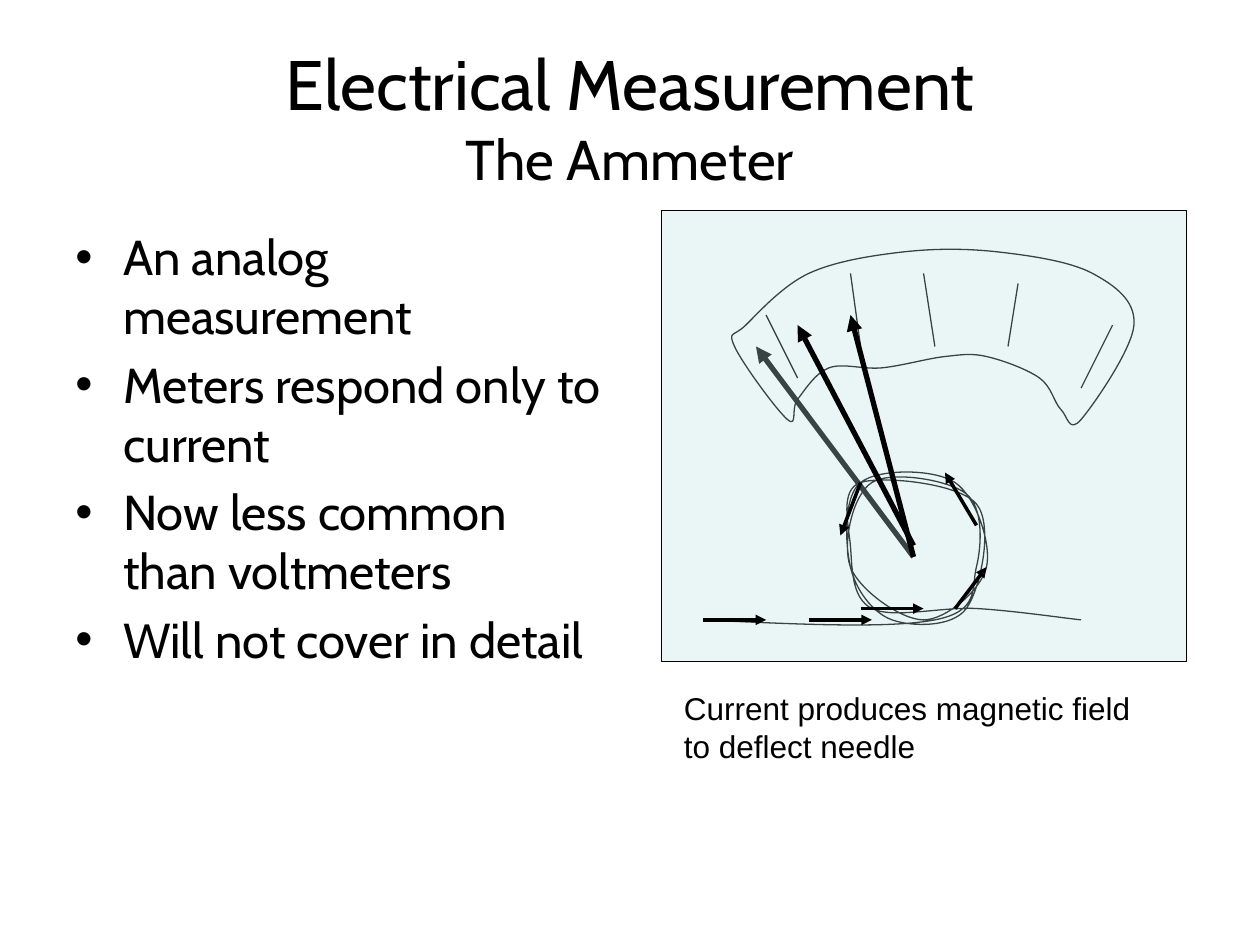
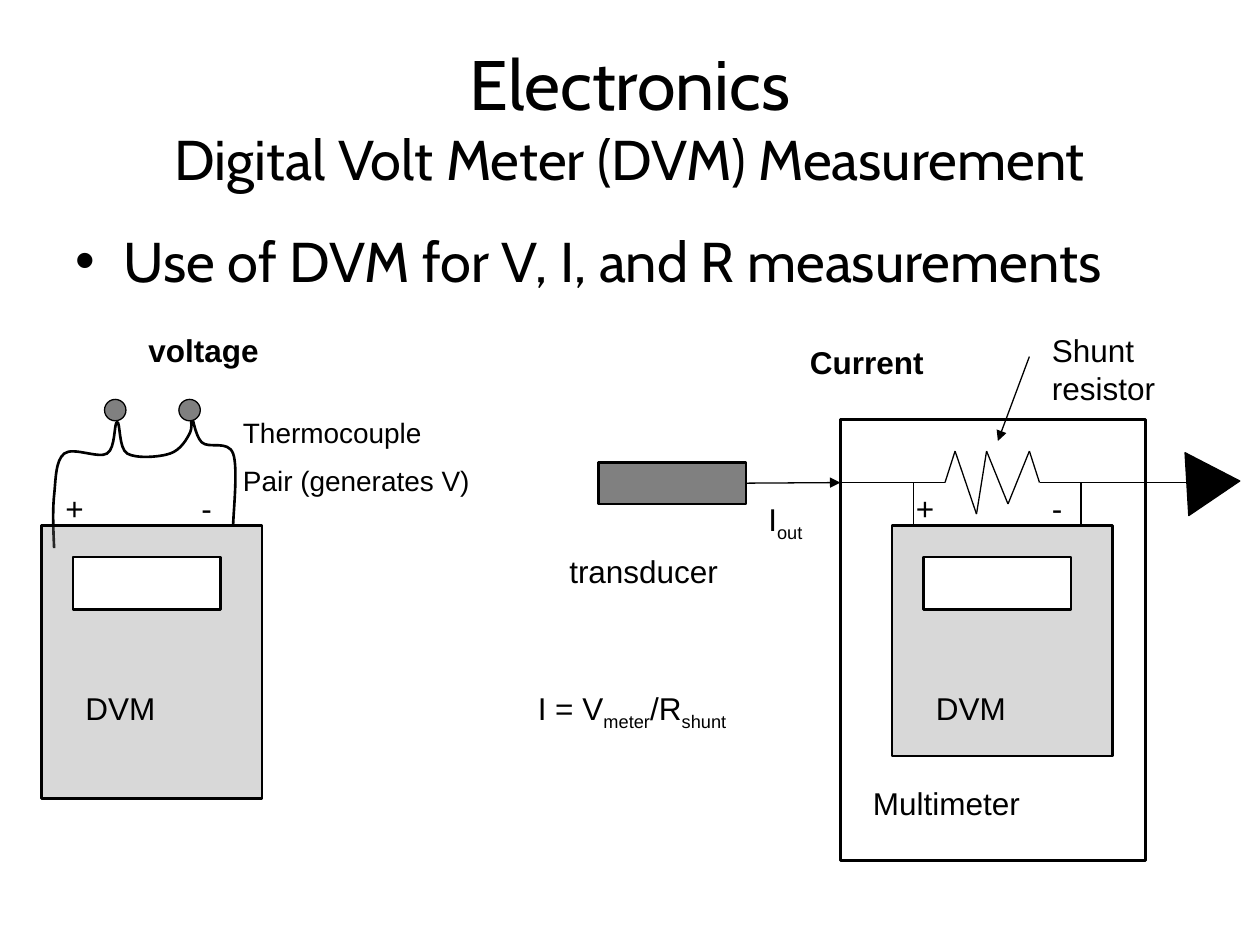
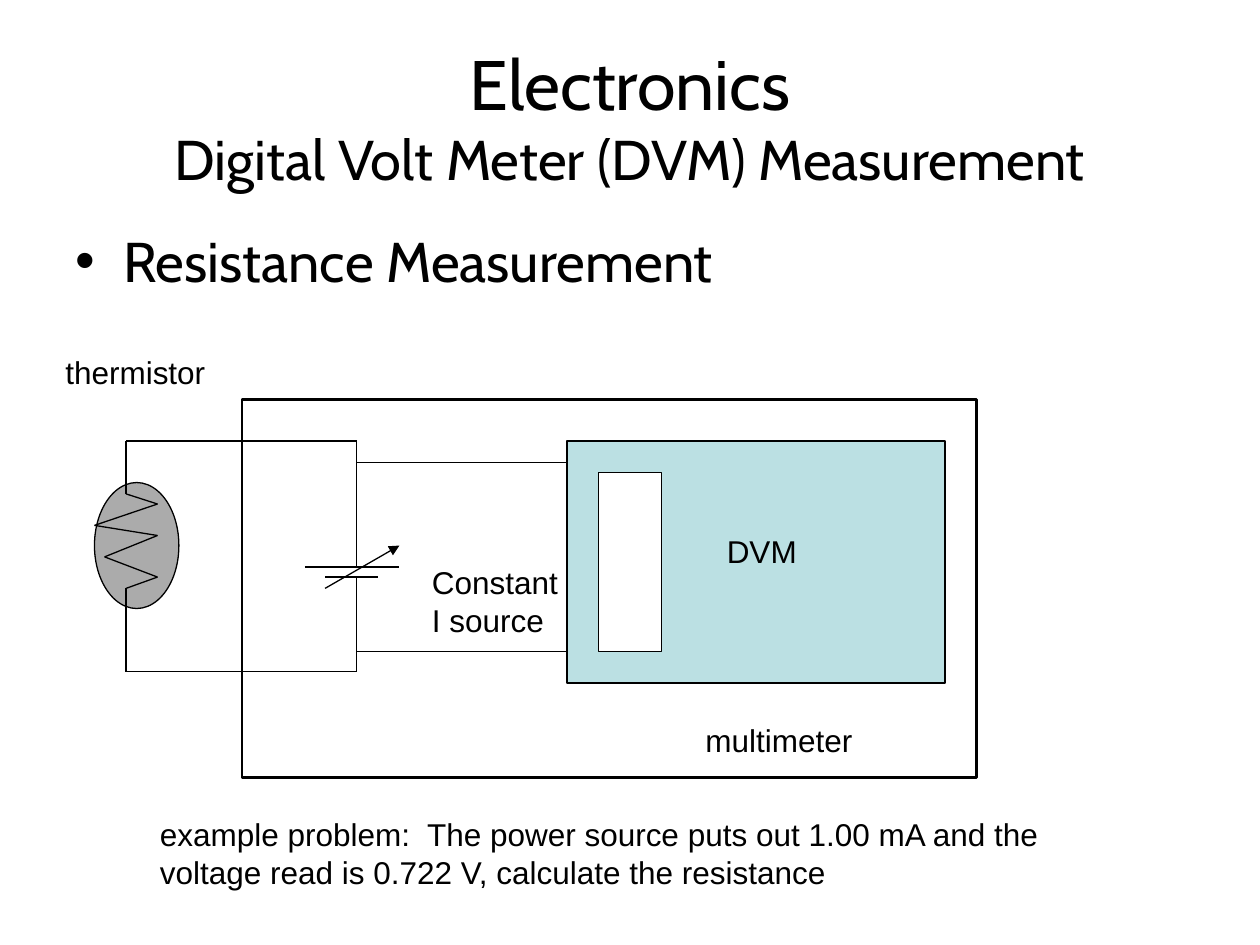
from itertools import pairwise

from lxml.etree import SubElement
from pptx import Presentation
from pptx.dml.color import RGBColor
from pptx.enum.shapes import MSO_CONNECTOR as Connector, MSO_SHAPE as Preset
from pptx.enum.text import MSO_ANCHOR as Anchor, PP_ALIGN as Align
from pptx.oxml.ns import qn
from pptx.util import Inches, Pt

BLACK = "000000"
WHITE = "FFFFFF"
GRAY = "808080"
AQUA = "BBE0E3"
TITLE_FONT = "Cabin"
LABEL_FONT = "Arial"
DVM_TITLE = ("Electronics", "Digital Volt Meter (DVM) Measurement")
BODY_WIDTH = 9


def color(value):
    return RGBColor.from_string(value)


def add_span(para, text, subscript=False, **font_format):
    span = para.add_run()
    span.text = text
    for name, value in font_format.items():
        setattr(span.font, name, value)
    span.font.color.rgb = color(BLACK)
    if subscript:
        span.font._element.set("baseline", "-25000")


def text_frame(page, place):
    frame = page.shapes.add_textbox(*map(Inches, place)).text_frame
    frame.word_wrap = True
    return frame


def add_paragraphs(frame, count, gap):
    for index in range(count):
        para = frame.add_paragraph() if index else frame.paragraphs[0]
        if index:
            para.space_before = Pt(gap)
        yield para


def add_title(page, heading, subheading):
    frame = text_frame(page, (0.5, 0.3, BODY_WIDTH, 1.25))
    frame.vertical_anchor = Anchor.MIDDLE
    para = frame.paragraphs[0]
    para.alignment = Align.CENTER
    add_span(para, heading, name=TITLE_FONT, size=Pt(40))
    para.add_line_break()
    add_span(para, subheading, name=TITLE_FONT, size=Pt(32))


def add_bullets(page, items, size=32, width=BODY_WIDTH):
    frame = text_frame(page, (0.5, 1.75, width, 4.95))
    for para, item in zip(add_paragraphs(frame, len(items), 0.2 * size), items):
        properties = para._p.get_or_add_pPr()
        properties.set("marL", str(Inches(0.38)))
        properties.set("indent", str(Inches(-0.38)))
        SubElement(properties, qn("a:buFont"), typeface=LABEL_FONT)
        SubElement(properties, qn("a:buChar"), char="•")
        add_span(para, item, name=TITLE_FONT, size=Pt(size))


def add_label(page, left, top, width, *lines, height=0.4, size=18, bold=False):
    frame = text_frame(page, (left, top, width, height))
    for para, line in zip(add_paragraphs(frame, len(lines), 0.5 * size), lines):
        for index, text in enumerate(line.split("_")):
            add_span(para, text, subscript=index % 2 == 1,
                     name=LABEL_FONT, size=Pt(size), bold=bold)


def style_shape(shape, fill=None, weight=0.75, opacity=100):
    shape.shadow.inherit = False
    shape.line.color.rgb = color(BLACK)
    shape.line.width = Pt(weight)
    if fill is None:
        shape.fill.background()
        return
    shape.fill.solid()
    shape.fill.fore_color.rgb = color(fill)
    if opacity < 100:
        swatch = shape.element.spPr.find(qn("a:solidFill"))[0]
        SubElement(swatch, qn("a:alpha"), val=str(opacity * 1000))


def add_box(shapes, place, fill=None, weight=0.75, opacity=100, preset=Preset.RECTANGLE):
    box = shapes.add_shape(preset, *map(Inches, place))
    style_shape(box, fill, weight, opacity)
    return box


def add_line(shapes, start, end, weight=0.75, arrow=False):
    line = shapes.add_connector(Connector.STRAIGHT, *map(Inches, (*start, *end)))
    line.line.color.rgb = color(BLACK)
    line.line.width = Pt(weight)
    properties = line.element.spPr
    if arrow:
        SubElement(properties.find(qn("a:ln")), qn("a:tailEnd"), type="triangle")
    SubElement(properties, qn("a:effectLst"))
    return line


def add_wire(shapes, *points):
    for start, end in pairwise(points):
        add_line(shapes, start, end)


def toward(point, before, after):
    return tuple(p + (a - b) / 6 for p, b, a in zip(point, before, after))


def curve_controls(points, closed):
    if closed:
        knots = [points[-1], *points, points[0], points[1]]
    else:
        knots = [points[0], *points, points[-1]]
    controls = []
    for before, start, end, after in zip(knots, knots[1:], knots[2:], knots[3:]):
        arriving = toward(end, after, start)
        leaving = toward(start, before, end)
        if not closed and not controls:
            leaving = tuple((s + a) / 2 for s, a in zip(start, arriving))
        controls += [leaving, arriving, end]
    return controls


def add_curve(page, points, weight=0.75, closed=False):
    builder = page.shapes.build_freeform(*map(Inches, points[0]))
    controls = curve_controls(points, closed)
    builder.add_line_segments([tuple(map(Inches, point)) for point in controls], close=closed)
    curve = builder.convert_to_shape()
    segments = list(curve.element.iter(qn("a:lnTo")))
    for first in range(0, len(segments), 3):
        bend, *others = segments[first:first + 3]
        for other in others:
            bend.append(other[0])
            other.getparent().remove(other)
        bend.tag = qn("a:cubicBezTo")
    style_shape(curve, weight=weight)


def add_dvm(page, left, height):
    add_box(page.shapes, (left, 4.17, 1.75, height), GRAY, 1.5, opacity=30)
    add_box(page.shapes, (left + 0.25, 4.42, 1.17, 0.42), WHITE, 1.5)
    add_label(page, left + 0.25, 5.42, 1.42, "DVM")
    add_label(page, left + 0.09, 3.83, 0.58, "+")
    add_label(page, left + 1.17, 3.83, 0.42, "-")


def ammeter_page(page):
    add_title(page, "Electrical Measurement", "The Ammeter")
    add_bullets(page, ["An analog measurement", "Meters respond only to current",
                       "Now less common than voltmeters", "Will not cover in detail"],
                size=28, width=4.42)
    coil = [(5.58, 4.92), (7.42, 4.92), (7.75, 4.5), (7.67, 3.92), (6.92, 3.83),
            (6.75, 4.5), (7.33, 4.92), (7.83, 4.5), (7.58, 3.83), (6.83, 3.83),
            (6.75, 4.5), (7.08, 4.92), (7.67, 4.83), (7.75, 4), (6.83, 3.83),
            (6.75, 4.33), (6.92, 4.83), (7.75, 4.83), (8.58, 4.92)]
    scale = [(6.25, 3.33), (5.83, 2.75), (5.92, 2.58), (6.42, 2.17), (7.17, 2),
             (7.92, 2), (8.67, 2.17), (9, 2.58), (8.58, 3.33), (8.42, 3.25),
             (8.25, 3), (7.83, 2.83), (7.5, 2.83), (7, 2.92), (6.58, 2.92), (6.33, 3.17)]
    ticks = [((6.08, 2.5), (6.33, 3)), ((6.75, 2.17), (6.83, 2.75)),
             ((7.33, 2.17), (7.42, 2.75)), ((8.08, 2.25), (8, 2.75)),
             ((8.83, 2.58), (8.58, 3.08))]
    currents = [((5.58, 4.92), (6.08, 4.92)), ((6.42, 4.92), (6.92, 4.92)),
                ((7.58, 4.83), (7.83, 4.5)), ((7.75, 4.17), (7.5, 3.75)),
                ((6.83, 3.83), (6.67, 4.25)), ((6.83, 4.83), (7.33, 4.83))]
    add_curve(page, coil)
    add_label(page, 5.33, 5.42, 3.92, "Current produces magnetic field to deflect needle", height=0.7)
    add_curve(page, scale, closed=True)
    add_line(page.shapes, (7.25, 4.42), (6, 2.75), 3, arrow=True)
    for tick in ticks:
        add_line(page.shapes, *tick)
    add_box(page.shapes, (5.25, 1.67, 4.17, 3.58), AQUA, opacity=30)
    for current in currents:
        add_line(page.shapes, *current, 2, arrow=True)
    add_line(page.shapes, (7.25, 4.33), (6.33, 2.58), 3, arrow=True)
    add_line(page.shapes, (7.25, 4.42), (6.75, 2.5), 3, arrow=True)


def add_voltage_circuit(page):
    leads = [(0.43, 4.35), (0.43, 3.93), (0.51, 3.6), (0.85, 3.6), (0.93, 3.35),
             (1.01, 3.6), (1.35, 3.6), (1.51, 3.43), (1.51, 3.26), (1.6, 3.51),
             (1.85, 3.6), (1.85, 4.18)]
    add_label(page, 1.08, 2.58, 1.92, "voltage", bold=True)
    add_label(page, 1.83, 3.25, 2.08, "Thermocouple", "Pair (generates V)",
              height=0.77, size=16)
    add_curve(page, leads, weight=1.5)
    for left in (0.83, 1.42):
        add_box(page.shapes, (left, 3.17, 0.17, 0.17), GRAY, preset=Preset.OVAL)
    add_dvm(page, 0.33, 2.17)


def add_current_circuit(page):
    shapes = page.shapes
    add_label(page, 6.33, 2.67, 1.92, "Current", bold=True)
    transducer = add_box(shapes, (4.75, 3.67, 1.17, 0.33), GRAY, 1.5)
    add_label(page, 4.42, 4.33, 1.5, "transducer")
    output = add_line(shapes, (5.92, 3.83), (6.67, 3.83), arrow=True)
    output.begin_connect(transducer, 3)
    add_label(page, 6, 3.92, 0.83, "I_out")
    add_box(shapes, (6.67, 3.33, 2.42, 3.5), weight=1.5)
    add_label(page, 6.83, 6.17, 1.42, "Multimeter")
    sink = add_box(shapes, (9.38, 3.62, 0.5, 0.42), BLACK, preset=Preset.ISOSCELES_TRIANGLE)
    sink.rotation = 86.6
    add_wire(shapes, (6.67, 3.83), (7.5, 3.83), (7.58, 3.58), (7.75, 4.08), (7.83, 3.58),
             (8, 4), (8.17, 3.58), (8.25, 3.83), (9.08, 3.83), (9.42, 3.83))
    add_line(shapes, (8.17, 2.83), (7.92, 3.5), arrow=True)
    add_label(page, 8.25, 2.58, 1.33, "Shunt resistor", height=0.7)
    add_dvm(page, 7.08, 1.83)
    for probe in (7.25, 8.58):
        add_line(shapes, (probe, 3.83), (probe, 4.17))
    add_label(page, 4.17, 5.42, 2, "I = V_meter_/R_shunt")


def voltage_current_page(page):
    add_title(page, *DVM_TITLE)
    add_bullets(page, ["Use of DVM for V, I, and R measurements"])
    add_voltage_circuit(page)
    add_current_circuit(page)


def resistance_page(page):
    shapes = page.shapes
    add_title(page, *DVM_TITLE)
    add_bullets(page, ["Resistance Measurement"])
    thermistor = shapes.add_group_shape().shapes
    add_wire(thermistor, (1, 3.92), (1.25, 4), (0.75, 4.17), (1.25, 4.25),
             (0.83, 4.42), (1.25, 4.58), (1, 4.67))
    add_box(thermistor, (0.75, 3.83, 0.67, 1), BLACK, opacity=33, preset=Preset.OVAL)
    add_label(page, 0.42, 2.75, 2, "thermistor")
    add_box(shapes, (1.92, 3.17, 5.83, 3), weight=1.5)
    add_label(page, 5.5, 5.67, 1.92, "multimeter")
    add_wire(shapes, (1, 3.92), (1, 3.5), (2.83, 3.5), (2.83, 4.5))
    add_wire(shapes, (1, 4.67), (1, 5.33), (2.83, 5.33), (2.83, 4.58))
    add_line(shapes, (2.42, 4.5), (3.17, 4.5))
    add_line(shapes, (2.58, 4.58), (3, 4.58))
    add_line(shapes, (2.58, 4.67), (3.17, 4.33), arrow=True)
    add_label(page, 3.33, 4.42, 1.25, "Constant I source", height=0.7)
    add_box(shapes, (4.5, 3.5, 3, 1.92), AQUA)
    add_label(page, 5.67, 4.17, 1.33, "DVM")
    add_box(shapes, (4.75, 3.75, 0.5, 1.42), WHITE)
    for lead in (3.67, 5.17):
        add_line(shapes, (2.83, lead), (4.5, lead))
    add_label(page, 1.17, 6.42, 7.42,
              "example problem:  The power source puts out 1.00 mA and the "
              "voltage read is 0.722 V, calculate the resistance", height=0.71)


def main():
    deck = Presentation()
    deck.slide_width, deck.slide_height = Inches(10), Inches(7.5)
    for build in (ammeter_page, voltage_current_page, resistance_page):
        build(deck.slides.add_slide(deck.slide_layouts[6]))
    deck.save("out.pptx")


if __name__ == "__main__":
    main()
